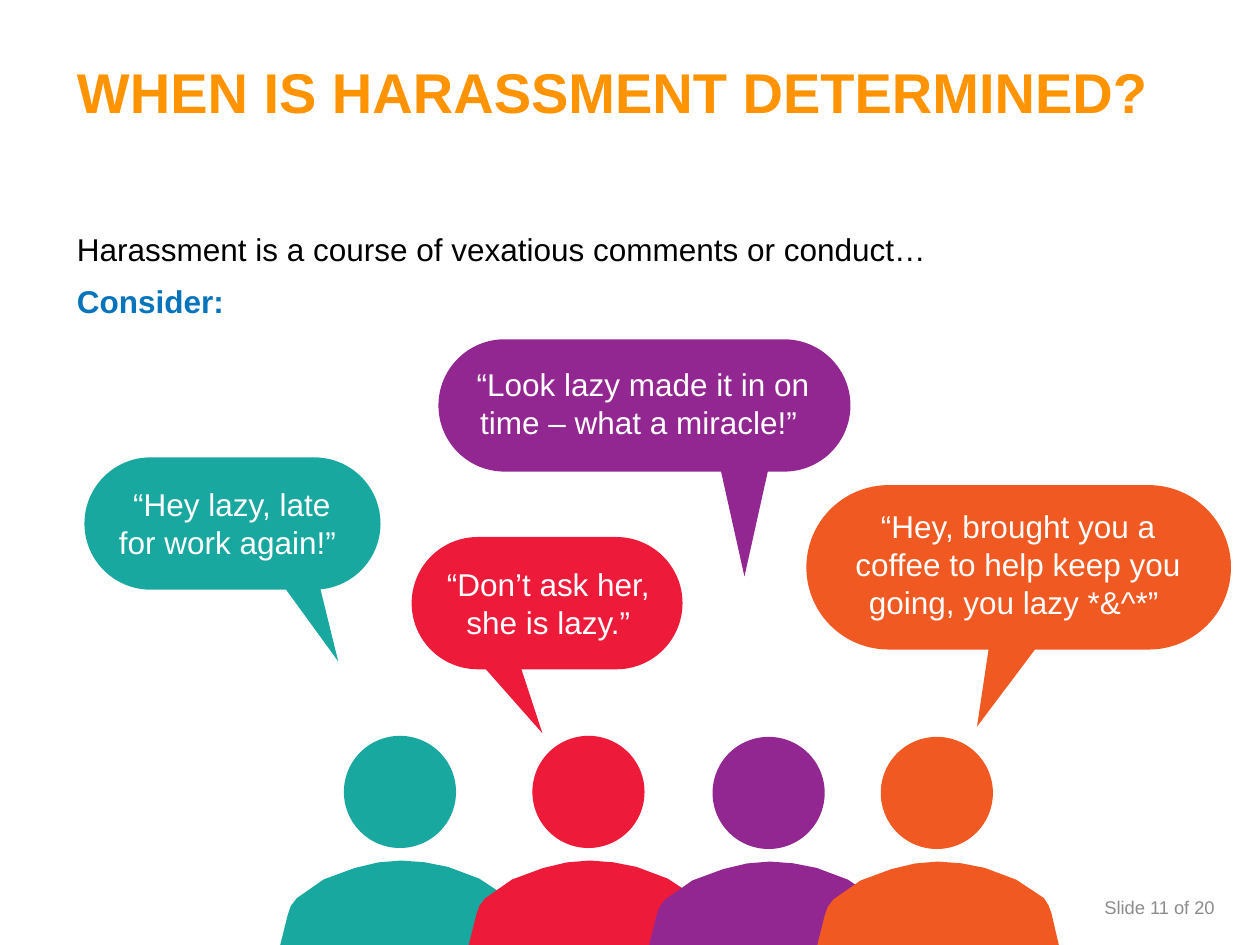
from dataclasses import dataclass

from pptx import Presentation
from pptx.dml.color import RGBColor
from pptx.enum.shapes import MSO_SHAPE
from pptx.enum.text import MSO_ANCHOR, PP_ALIGN
from pptx.util import Emu, Inches, Pt

PILL, TAIL, HEAD = MSO_SHAPE.ROUNDED_RECTANGLE, MSO_SHAPE.ISOSCELES_TRIANGLE, MSO_SHAPE.OVAL
TOP, MIDDLE = MSO_ANCHOR.TOP, MSO_ANCHOR.MIDDLE
LEFT, CENTER, RIGHT = PP_ALIGN.LEFT, PP_ALIGN.CENTER, PP_ALIGN.RIGHT

COLUMNS, ROWS = 100, 75
SLIDE_WIDTH, SLIDE_HEIGHT = Inches(10), Inches(7.5)
HEAD_SIZE, HEAD_INDENT, SHOULDER_DROP = 8.9, 5.05, 9.9
SHOULDERS = [
    (18.6, 4.1), (18.36, 3.46), (18, 2.9), (15.8, 1.44), (13.3, 0.5), (11.45, 0.14),
    (9.6, 0), (7.78, 0.15), (5.9, 0.6), (3.45, 1.5), (1.3, 3), (0.84, 3.61),
    (0.6, 4.3), (0, 6.7), (19.2, 6.7),
]


@dataclass(frozen=True)
class Theme:
    """Colours, font and type sizes of the slide."""
    font: str = "Arial"
    title_size: float = 32
    text_size: float = 18
    footer_size: float = 10.5
    title: str = "FF9300"
    text: str = "000000"
    accent: str = "0674BC"
    footer: str = "8C8C8C"
    light: str = "FFFFFF"
    teal: str = "19A89F"
    red: str = "ED1A3A"
    purple: str = "932791"
    orange: str = "F15922"


THEME = Theme()

BUBBLES = [
    (THEME.teal, (6.7, 36.3, 23.5, 10.5), (23.73, 45.2, 3, 7.65), 155.1,
     (8.3, 38, 20.2, 7.1), "“Hey lazy, late for work again!” "),
    (THEME.red, (32.67, 42.62, 21.5, 10.5), (39.3, 50.5, 3.4, 8.25), 150.2,
     (33.97, 44.35, 19.1, 7.1), "“Don’t ask her, she is lazy.”"),
    (THEME.purple, (34.8, 26.93, 32.7, 10.5), (56.83, 35.65, 4.5, 10.1), 180,
     (36.83, 28.5, 28.4, 7.1), "“Look lazy made it in on time – what a miracle!” "),
    (THEME.orange, (64, 38.5, 33.7, 13.05), (77.04, 49.7, 4.2, 8.3), 202.7,
     (66.15, 39.75, 29.3, 10.1),
     "“Hey, brought you a coffee to help keep you going, you lazy *&^*” "),
]
PEOPLE = [
    (THEME.teal, 22.24, 58.4),
    (THEME.red, 37.2, 58.4),
    (THEME.purple, 51.5, 58.48),
    (THEME.orange, 64.85, 58.48),
]


def col(count):
    """Return the width of a number of grid columns."""
    return Emu(round(SLIDE_WIDTH * count / COLUMNS))


def row(count):
    """Return the height of a number of grid rows."""
    return Emu(round(SLIDE_HEIGHT * count / ROWS))


def place(box):
    """Turn a grid box into slide lengths."""
    left, top, width, height = box
    return col(left), row(top), col(width), row(height)


def paint(shape, color):
    """Fill a shape with one colour, without line or shadow."""
    shape.shadow.inherit = False
    shape.fill.solid()
    shape.fill.fore_color.rgb = RGBColor.from_string(color)
    shape.line.fill.background()


def write(frame, text, *, size=THEME.text_size, color=THEME.text, bold=False,
          align=LEFT, spacing=1.0, before=0):
    """Write a paragraph into a text frame, after any text already there."""
    paragraph = frame.add_paragraph() if frame.text else frame.paragraphs[0]
    paragraph.alignment = align
    paragraph.line_spacing = spacing
    paragraph.space_before = Pt(before)
    run = paragraph.add_run()
    run.text = text
    run.font.name = THEME.font
    run.font.size = Pt(size)
    run.font.bold = bold
    run.font.color.rgb = RGBColor.from_string(color)


def add_frame(slide, box, anchor=TOP):
    """Add a wrapping text box and return its frame."""
    frame = slide.shapes.add_textbox(*place(box)).text_frame
    frame.word_wrap = True
    frame.vertical_anchor = anchor
    return frame


def add_bubble(slide, color, body_box, tail_box, tail_angle, quote_box, quote):
    """Add a speech bubble with its tail and its quote."""
    body = slide.shapes.add_shape(PILL, *place(body_box))
    body.adjustments[0] = 0.5
    paint(body, color)
    tail = slide.shapes.add_shape(TAIL, *place(tail_box))
    tail.rotation = tail_angle
    paint(tail, color)
    write(add_frame(slide, quote_box), quote, color=THEME.light, align=CENTER)


def add_person(slide, color, left, top):
    """Add a round head above a pair of shoulders."""
    head_box = (left + HEAD_INDENT, top, HEAD_SIZE, HEAD_SIZE)
    paint(slide.shapes.add_shape(HEAD, *place(head_box)), color)
    start, *rest = [(col(left + x), row(top + SHOULDER_DROP + y)) for x, y in SHOULDERS]
    builder = slide.shapes.build_freeform(*start)
    builder.add_line_segments(rest, close=True)
    paint(builder.convert_to_shape(), color)


def main():
    """Build the slide and save it."""
    deck = Presentation()
    deck.slide_width, deck.slide_height = SLIDE_WIDTH, SLIDE_HEIGHT
    slide = deck.slides.add_slide(deck.slide_layouts[6])

    title = add_frame(slide, (5.13, 0.3, 90.4, 14.5), MIDDLE)
    write(title, "WHEN IS HARASSMENT DETERMINED?", size=THEME.title_size,
          color=THEME.title, bold=True, spacing=0.9)
    intro = add_frame(slide, (5.13, 18.13, 90.4, 10.6))
    write(intro, "Harassment is a course of vexatious comments or conduct…", spacing=0.9)
    write(intro, "Consider:", color=THEME.accent, bold=True, spacing=0.9, before=10)

    for bubble in BUBBLES:
        add_bubble(slide, *bubble)
    footer = add_frame(slide, (62.6, 70, 34.8, 4), MIDDLE)
    write(footer, "Slide 11 of 20", size=THEME.footer_size, color=THEME.footer, align=RIGHT)
    for person in PEOPLE:
        add_person(slide, *person)

    deck.save("out.pptx")


if __name__ == "__main__":
    main()
